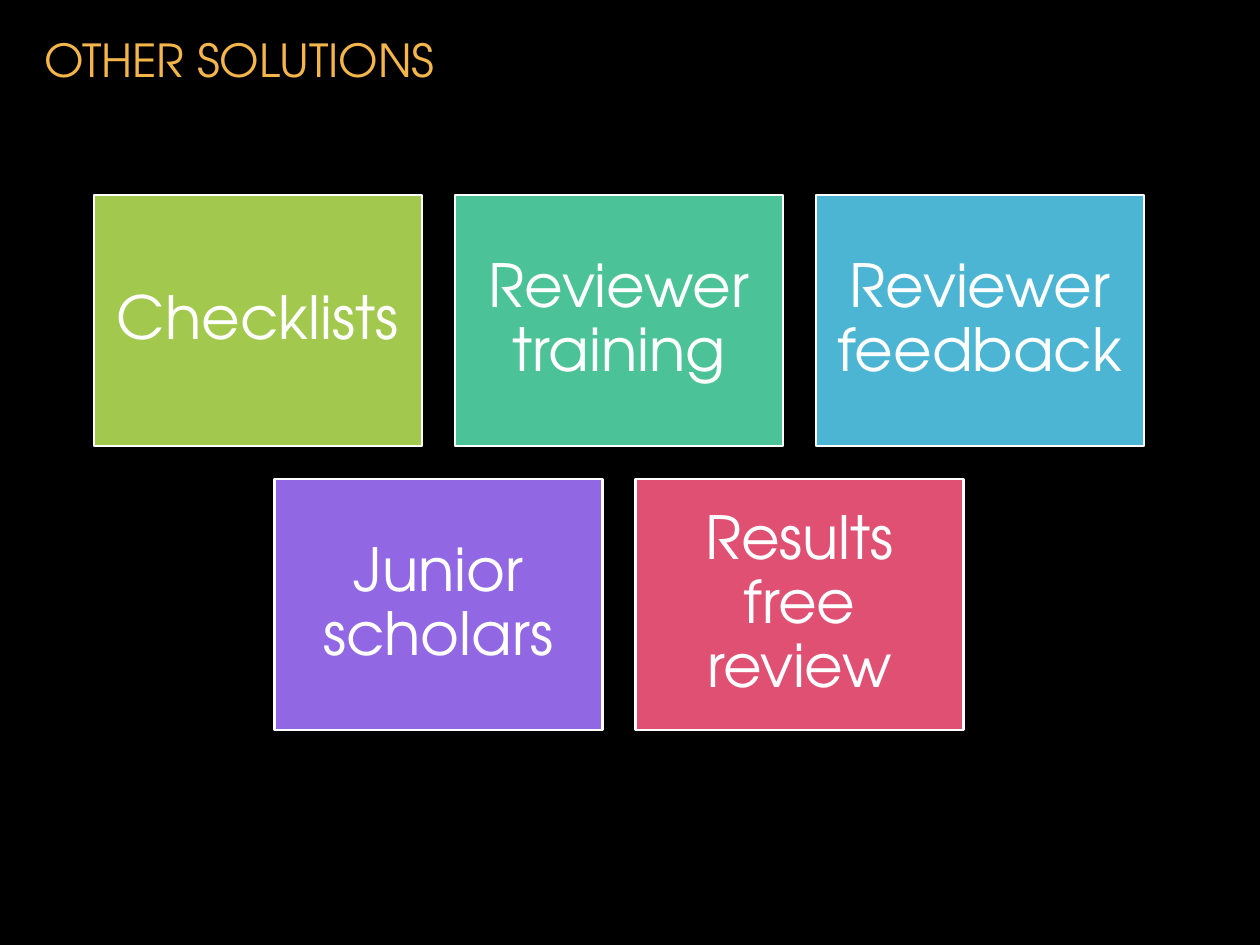
from pptx import Presentation
from pptx import util as u
from pptx.dml.color import RGBColor
from pptx.enum import shapes, text

PX = 914400 / 126
FONT = "TeX Gyre Adventor"


def px(n):
    return u.Emu(round(n * PX))


def rgb(value):
    return RGBColor.from_string(value)


prs = Presentation()
prs.slide_width, prs.slide_height = px(1260), px(945)
s = prs.slides.add_slide(prs.slide_layouts[6])
s.background.fill.solid()
s.background.fill.fore_color.rgb = rgb("000000")

title = s.shapes.add_textbox(px(32), px(-31), px(1034), px(181))
tf = title.text_frame
tf.word_wrap = True
tf.vertical_anchor = text.MSO_ANCHOR.MIDDLE
p = tf.paragraphs[0]
p.text = "OTHER SOLUTIONS"
p.font.name = FONT
p.font.size = u.Pt(26)
p.font.color.rgb = rgb("F4B54B")

card_w, card_h, gap = 328, 251, 33
center_x, top = 619, 195
rows = [
    [("Checklists", "A2C84E"), ("Reviewer training", "4BC298"), ("Reviewer feedback", "4CB5D3")],
    [("Junior scholars", "9167E3"), ("Results free review", "E05073")],
]

for i, row in enumerate(rows):
    row_w = len(row) * (card_w + gap) - gap
    for j, (label, color) in enumerate(row):
        x = center_x - row_w / 2 + j * (card_w + gap)
        y = top + i * (card_h + gap)
        sp = s.shapes.add_shape(shapes.MSO_SHAPE.RECTANGLE, px(x), px(y), px(card_w), px(card_h))
        sp.shadow.inherit = False
        sp.fill.solid()
        sp.fill.fore_color.rgb = rgb(color)
        sp.line.color.rgb = rgb("FFFFFF")
        sp.line.width = u.Pt(1.5)
        tf = sp.text_frame
        tf.word_wrap = True
        tf.vertical_anchor = text.MSO_ANCHOR.MIDDLE
        tf.margin_left = tf.margin_right = tf.margin_top = tf.margin_bottom = px(18)
        p = tf.paragraphs[0]
        p.text = label
        p.alignment = text.PP_ALIGN.CENTER
        p.line_spacing = 0.9
        p.font.name = FONT
        p.font.size = u.Pt(34)
        p.font.color.rgb = rgb("FFFFFF")

prs.save("out.pptx")
